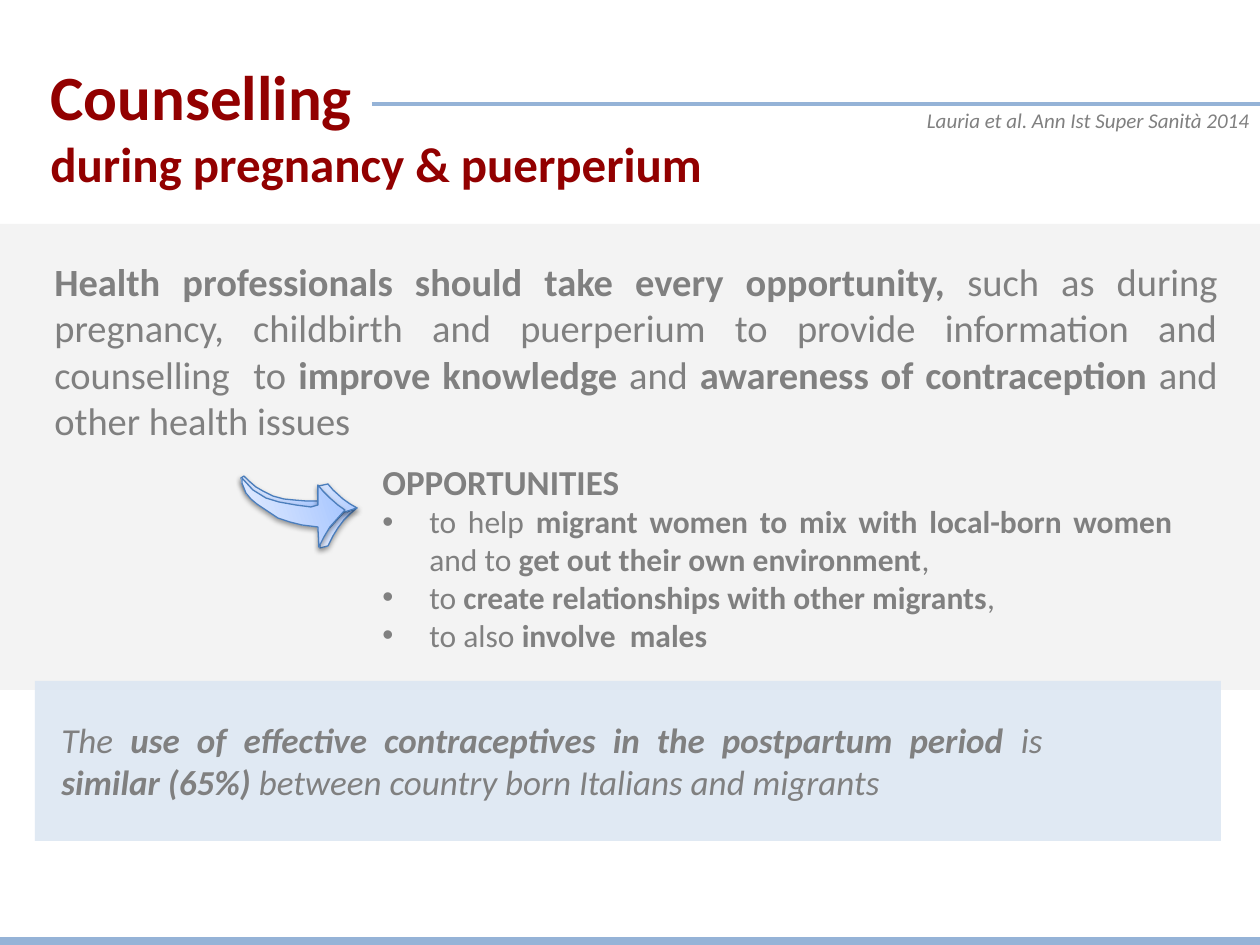
"""Build the slide on counselling during pregnancy and puerperium."""
from lxml import etree
from pptx import Presentation
from pptx.dml.color import RGBColor
from pptx.enum import shapes, text
from pptx.oxml.ns import qn
from pptx.util import Emu, Pt

SCALE = 914400 / 126
COLOURS = {
    "band": "F2F2F2", "note": "DCE6F2", "grey": "808080", "title": "920000",
    "rule": "95B3D7", "edge": "4B7EBC", "deep": "A4C4FF", "pale": "E6EEFF",
    "shadow": "000000",
}
LEFT, RIGHT, JUSTIFY = text.PP_ALIGN.LEFT, text.PP_ALIGN.RIGHT, text.PP_ALIGN.JUSTIFY


def px(value):
    return Emu(round(value * SCALE))


def add_text(bounds, paragraphs, colour="grey", align=JUSTIFY, italic=False, middle=False):
    """Add a text box; asterisks enclose bold words and a leading • makes a bullet."""
    box = page.shapes.add_textbox(*map(px, bounds))
    frame = box.text_frame
    frame.word_wrap = True
    if middle:
        frame.vertical_anchor = text.MSO_ANCHOR.MIDDLE
    else:
        frame.auto_size = text.MSO_AUTO_SIZE.SHAPE_TO_FIT_TEXT
    for index, (size, words) in enumerate(paragraphs):
        para = frame.add_paragraph() if index else frame.paragraphs[0]
        para.alignment = align
        if words.startswith("•"):
            words = words[1:]
            properties = para._p.get_or_add_pPr()
            properties.set("marL", str(px(47)))
            properties.set("indent", str(-px(47)))
            etree.SubElement(properties, qn("a:buFont"), typeface="Arial")
            etree.SubElement(properties, qn("a:buChar"), char="•")
        for order, part in enumerate(words.split("*")):
            if part:
                span = para.add_run()
                span.text = part
                span.font.name = "Calibri"
                span.font.size = Pt(size)
                span.font.bold = order % 2 == 1
                span.font.italic = italic
                span.font.color.rgb = RGBColor.from_string(COLOURS[colour])


deck = Presentation()
deck.slide_width, deck.slide_height = px(1260), px(945)
page = deck.slides.add_slide(deck.slide_layouts[6])

for name, bounds in (("band", (-39, 224, 1380, 466)), ("note", (35, 681, 1186, 160))):
    panel = page.shapes.add_shape(shapes.MSO_SHAPE.RECTANGLE, *map(px, bounds))
    panel.shadow.inherit = False
    panel.line.fill.background()
    panel.fill.solid()
    panel.fill.fore_color.rgb = RGBColor.from_string(COLOURS[name])
    tint = panel._element.spPr.find(".//" + qn("a:srgbClr"))
    etree.SubElement(tint, qn("a:alpha"), val="88000")

add_text((49, 712, 1006, 97), [
    (20, "The *use of effective contraceptives in the postpartum period *is "
         "*similar (65%) *between country born Italians and migrants"),
], italic=True)
add_text((42, 252, 1188, 199), [
    (22, "*Health professionals should take every opportunity, *such as during pregnancy, "
         "childbirth and puerperium to provide information and counselling  to "
         "*improve knowledge *and *awareness of contraception *and other health issues"),
])
add_text((38, 55, 810, 140), [
    (36, "*Counselling*"),
    (28, "*during pregnancy & puerperium*"),
], colour="title", align=LEFT, middle=True)
add_text((737, 101, 525, 38), [
    (12, "Lauria et al. Ann Ist Super Sanità 2014"),
], align=RIGHT, italic=True)

for start, end, height, weight in ((-10, 1280, 942, 6), (372, 1313, 104, 2.25)):
    rule = page.shapes.add_connector(
        shapes.MSO_CONNECTOR.STRAIGHT, px(start), px(height), px(end), px(height))
    rule.line.color.rgb = RGBColor.from_string(COLOURS["rule"])
    rule.line.width = Pt(weight)
    etree.SubElement(rule._element.spPr, qn("a:effectLst"))

add_text((370, 454, 815, 208), [
    (20, "*OPPORTUNITIES*"),
    (18, "•to help *migrant women to mix with local-born women *and to "
         "*get out their own environment*,"),
    (18, "•to *create relationships with other migrants*,"),
    (18, "•to also *involve  males*"),
])

ARROW_FACES = [
    [(241, 478), (244, 476), (249, 481), (256, 487), (263, 491), (273, 496), (284, 499),
     (294, 500), (306, 501), (318, 501), (318, 507), (302, 508), (287, 507), (267, 503),
     (253, 494), (247, 489), (244, 485)],
    [(347, 512), (357, 508), (350, 514), (344, 520), (338, 528), (333, 536), (328, 546),
     (320, 548), (320, 544), (325, 533), (335, 522), (344, 512), (357, 508)],
    [(319, 486), (328, 484), (333, 490), (343, 499), (350, 504), (357, 508), (345, 512),
     (338, 508), (329, 501), (321, 493)],
    [(242, 478), (242, 483), (246, 493), (251, 499), (257, 504), (266, 510), (278, 518),
     (290, 522), (302, 525), (318, 527), (319, 547), (324, 537), (330, 527), (338, 518),
     (345, 510), (338, 505), (330, 498), (323, 491), (318, 485), (318, 505), (311, 507),
     (296, 505), (279, 502), (266, 498), (253, 490)],
]
for points in ARROW_FACES:
    builder = page.shapes.build_freeform(*points[0], scale=SCALE)
    builder.add_line_segments(points[1:], close=True)
    face = builder.convert_to_shape()
    face.fill.gradient()
    face.fill.gradient_angle = 198
    for stop, name in zip(face.fill.gradient_stops, ("deep", "pale")):
        stop.color.rgb = RGBColor.from_string(COLOURS[name])
    face.line.color.rgb = RGBColor.from_string(COLOURS["edge"])
    face.line.width = Pt(0.75)
    face.shadow.inherit = False
    effects = face._element.spPr.find(qn("a:effectLst"))
    shadow = etree.SubElement(effects, qn("a:outerShdw"), blurRad=str(Pt(3.1)),
                              dist=str(Pt(1.6)), dir="5400000", rotWithShape="0")
    shade = etree.SubElement(shadow, qn("a:srgbClr"), val=COLOURS["shadow"])
    etree.SubElement(shade, qn("a:alpha"), val="38000")

deck.save("out.pptx")
